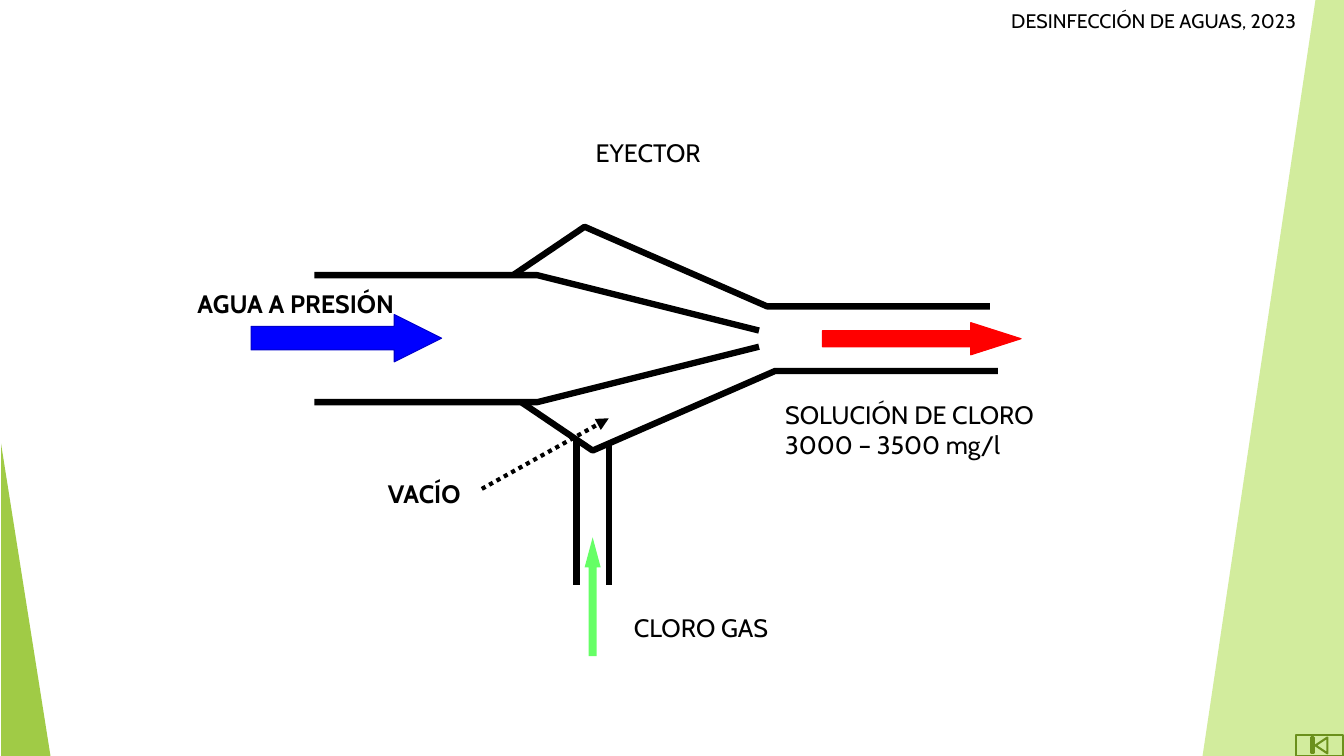
import pptx
import pptx.util
import pptx.dml.color
import pptx.enum.dml
import pptx.enum.shapes
import pptx.enum.text
import pptx.oxml
import pptx.oxml.ns

COLORS = {
    "black": "000000", "pale_green": "C0E474", "leaf": "90C226", "olive": "6B901C",
    "water": "0000FF", "water_edge": "0000CC", "gas": "66FF66", "solution": "FF0000",
}
FONT = "Cabin"
PRESET = pptx.enum.shapes.MSO_SHAPE
ALIGN = pptx.enum.text.PP_ALIGN

deck = pptx.Presentation()
deck.slide_width = pptx.util.Inches(13.33)
deck.slide_height = pptx.util.Inches(7.5)
slide = deck.slides.add_slide(deck.slide_layouts[6])
shapes = slide.shapes

# Grid of 100 columns by 100 rows
column = deck.slide_width / 100
row = deck.slide_height / 100


def on_grid(*lengths):
    return [round(n * (row if i % 2 else column)) for i, n in enumerate(lengths)]


def paint(shape, fill=None, line=None, width=0.75, alpha=None):
    shape.shadow.inherit = False
    if fill:
        shape.fill.solid()
        shape.fill.fore_color.rgb = pptx.dml.color.RGBColor.from_string(COLORS[fill])
    else:
        shape.fill.background()
    if alpha:
        tint = shape.fill._xPr.find(".//" + pptx.oxml.ns.qn("a:srgbClr"))
        tint.append(pptx.oxml.parse_xml(
            f'<a:alpha {pptx.oxml.ns.nsdecls("a")} val="{alpha * 1000}"/>'))
    if line:
        shape.line.color.rgb = pptx.dml.color.RGBColor.from_string(COLORS[line])
        shape.line.width = pptx.util.Pt(width)
    else:
        shape.line.fill.background()


# Ejector outline: the lower walls mirror the upper ones about the axis
axis = 44.8
nozzle = [(23.4, 36.4), (39.98, 36.4), (56.48, 43.73)]
chamber = [(38.18, 36.4), (43.5, 30), (57.08, 40.53), (73.65, 40.53)]
lower_nozzle = [(x, 2 * axis - y) for x, y in nozzle]
lower_chamber = [(x + 0.6, 2 * axis - y) for x, y in chamber]

# Side bands and ejector walls
right_band = [(97.88, 0), (100, 0), (100, 100), (89.48, 100)]
outlines = [(right_band, True, {"fill": "pale_green", "alpha": 70})]
for wall in (nozzle, lower_nozzle, chamber, lower_chamber):
    outlines.append((wall, False, {"line": "black", "width": 4.5}))
for points, closed, style in outlines:
    corners = [on_grid(*point) for point in points]
    builder = shapes.build_freeform(*corners[0])
    builder.add_line_segments(corners[1:], close=closed)
    paint(builder.convert_to_shape(), **style)

# Gas pipe walls and dotted pointer to the vacuum
pipe_walls = [(x, 58.4, x, 77.33, 4.5) for x in (42.9, 45.3)]
vacuum_pointer = (35.85, 64.67, 45.3, 55.33, 3)
for *ends, width in pipe_walls + [vacuum_pointer]:
    stroke = shapes.add_connector(
        pptx.enum.shapes.MSO_CONNECTOR.STRAIGHT, *on_grid(*ends))
    stroke.line.color.rgb = pptx.dml.color.RGBColor.from_string(COLORS["black"])
    stroke.line.width = pptx.util.Pt(width)
    stroke._element.spPr.append(pptx.oxml.parse_xml(
        f'<a:effectLst {pptx.oxml.ns.nsdecls("a")}/>'))
stroke.line.dash_style = pptx.enum.dml.MSO_LINE.ROUND_DOT
stroke.line._get_or_add_ln().append(pptx.oxml.parse_xml(
    f'<a:tailEnd {pptx.oxml.ns.nsdecls("a")} type="triangle"/>'))

# Left band, return button and flow arrows
presets = [
    (PRESET.ISOSCELES_TRIANGLE, (0.08, 58.67, 3.68, 41.33), [0],
     {"fill": "leaf", "alpha": 85}),
    (PRESET.ACTION_BUTTON_BEGINNING, (96.45, 97.2, 3.45, 2.8), [],
     {"line": "olive", "width": 1.5}),
    (PRESET.RIGHT_ARROW, (18.68, 41.6, 14.18, 6.27), [0.5, 1],
     {"fill": "water", "line": "water_edge"}),
    (PRESET.UP_ARROW, (43.5, 71.07, 1.2, 15.73), [0.5, 1.87], {"fill": "gas"}),
    (PRESET.RIGHT_ARROW, (61.2, 42.67, 14.78, 4.27), [0.5, 1.56],
     {"fill": "solution", "line": "solution"}),
]
for preset, place, adjustments, style in presets:
    figure = shapes.add_shape(preset, *on_grid(*place))
    for i, value in enumerate(adjustments):
        figure.adjustments[i] = value
    paint(figure, **style)

# Labels
labels = [
    ("DESINFECCIÓN DE AGUAS, 2023", (73.28, 0.53, 25.13, 4.53), 14, False, ALIGN.CENTER),
    ("EYECTOR", (10.73, 17.47, 75, 5.33), 18, False, ALIGN.CENTER),
    ("AGUA A PRESIÓN", (13.95, 37.47, 19.5, 5.33), 18, True, ALIGN.LEFT),
    ("SOLUCIÓN DE CLORO\v3000 – 3500 mg/l", (57.68, 52.13, 24.83, 10.27), 18, False,
     ALIGN.LEFT),
    ("VACÍO", (28.13, 62.67, 8.25, 5.33), 18, True, ALIGN.LEFT),
    ("CLORO GAS", (46.43, 80.4, 16.5, 5.73), 18, False, ALIGN.LEFT),
]
for wording, place, size, bold, alignment in labels:
    frame = shapes.add_textbox(*on_grid(*place)).text_frame
    frame.word_wrap = True
    paragraph = frame.paragraphs[0]
    paragraph.text = wording
    paragraph.alignment = alignment
    font_format = {"name": FONT, "size": pptx.util.Pt(size), "bold": bold}
    for run in paragraph.runs:
        for attribute, value in font_format.items():
            setattr(run.font, attribute, value)
        run.font.color.rgb = pptx.dml.color.RGBColor.from_string(COLORS["black"])

deck.save("out.pptx")
